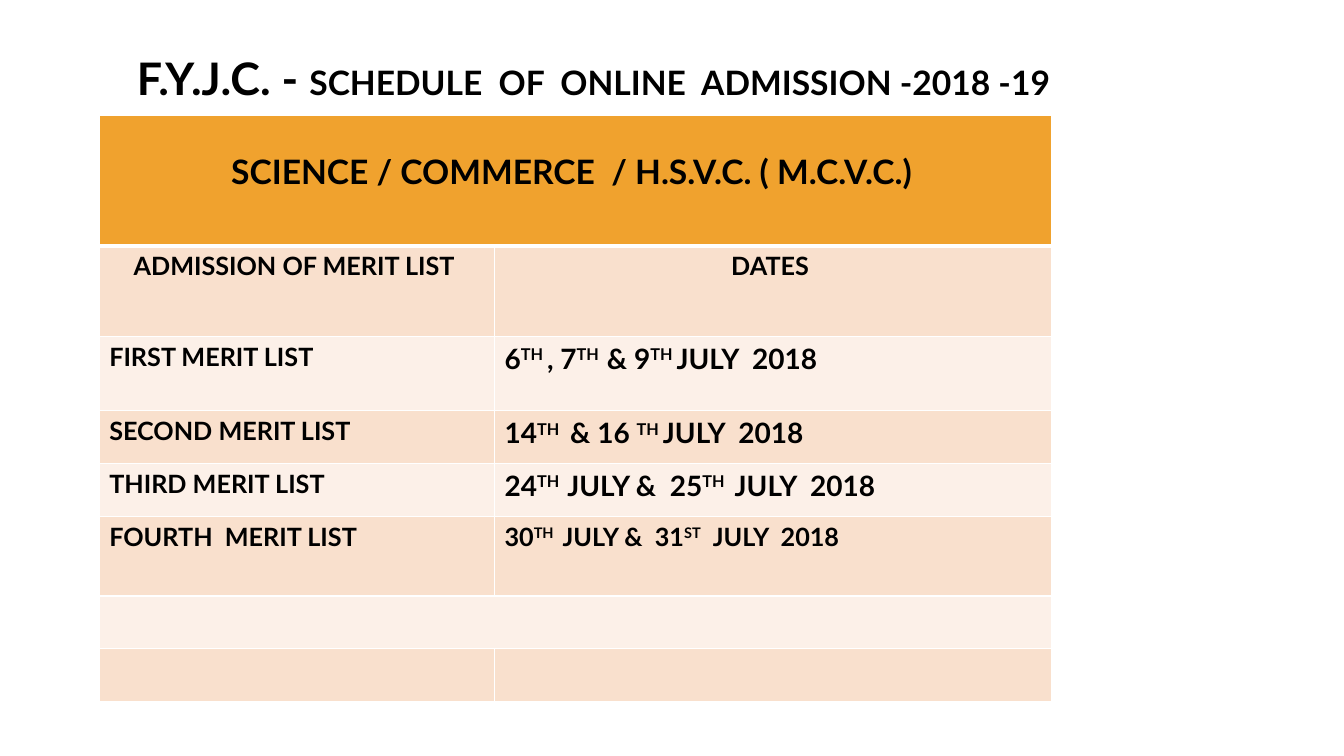
from lxml import etree
from pptx import Presentation
from pptx import util as u
from pptx.dml.color import RGBColor
from pptx.enum import text
from pptx.oxml import ns

FONT = "Lato"
BLACK, WHITE = "000000", "FFFFFF"
ORANGE, PEACH, CREAM = "F0A22E", "F9E0CD", "FCF0E8"
COLUMN_WIDTHS = [9.96, 14.05]
ROW_HEIGHTS = [3.28, 2.28, 1.87, 1.33, 1.33, 2.01, 1.33, 1.33]
STREAMS = "SCIENCE / COMMERCE  / H.S.V.C. ( M.C.V.C.) "
HEADINGS = ["ADMISSION OF MERIT LIST ", "DATES "]
MERIT_LISTS = [
    ("FIRST MERIT LIST", "6^TH ^, 7^TH  ^& 9^TH ^JULY  2018", 20),
    ("SECOND MERIT LIST", "14^TH ^ & 16 ^TH ^JULY  2018", 20),
    ("THIRD MERIT LIST", "24^TH  ^JULY &  25^TH ^ JULY  2018", 20),
    ("FOURTH  MERIT LIST", "30^TH ^ JULY &  31^ST  ^ JULY  2018", 18),
]


def color(value):
    return RGBColor.from_string(value)


def write(para, words, size=18, align=text.PP_ALIGN.LEFT, fill=BLACK):
    para.alignment = align
    for index, part in enumerate(words.split("^")):
        span = para.add_run()
        span.text = part
        span.font.name = FONT
        span.font.size = u.Pt(size)
        span.font.bold = True
        span.font.color.rgb = color(fill)
        if index % 2:
            span._r.get_or_add_rPr().set("baseline", "30000")


def paint_cell(cell, fill, top=1, bottom=1):
    cell.fill.solid()
    cell.fill.fore_color.rgb = color(fill)
    properties = cell._tc.get_or_add_tcPr()
    borders = [("lnL", 1), ("lnR", 1), ("lnT", top), ("lnB", bottom)]
    for position, (side, width) in enumerate(borders):
        line = etree.Element(ns.qn(f"a:{side}"), w=str(u.Pt(width)))
        solid = etree.SubElement(line, ns.qn("a:solidFill"))
        etree.SubElement(solid, ns.qn("a:srgbClr"), val=WHITE)
        properties.insert(position, line)


def add_title(page, left, top, width, height):
    box = page.shapes.title
    box.left, box.top, box.width, box.height = map(u.Cm, (left, top, width, height))
    frame = box.text_frame
    frame.word_wrap = True
    frame.auto_size = text.MSO_AUTO_SIZE.NONE
    frame.vertical_anchor = text.MSO_ANCHOR.TOP
    frame.margin_left = u.Cm(2.46)
    para = frame.paragraphs[0]
    write(para, "F.Y.J.C. - ", size=32)
    write(para, "SCHEDULE  OF  ONLINE  ADMISSION -2018 -19", size=24)


def add_schedule(page, left, top):
    table = page.shapes.add_table(
        len(ROW_HEIGHTS), len(COLUMN_WIDTHS), u.Cm(left), u.Cm(top),
        u.Cm(sum(COLUMN_WIDTHS)), u.Cm(sum(ROW_HEIGHTS))).table
    for column, width in zip(table.columns, COLUMN_WIDTHS):
        column.width = u.Cm(width)
    for index, (row, height) in enumerate(zip(table.rows, ROW_HEIGHTS)):
        row.height = u.Cm(height)
        fill = ORANGE if index == 0 else PEACH if index % 2 else CREAM
        for cell in row.cells:
            paint_cell(cell, fill, top=3 if index == 1 else 1,
                       bottom=3 if index == 0 else 1)
    for index in (0, 6):
        table.cell(index, 0).merge(table.cell(index, 1))

    banner = table.cell(0, 0)
    banner.margin_top = u.Cm(0.89)
    write(banner.text_frame.paragraphs[0], STREAMS, size=24,
          align=text.PP_ALIGN.CENTER)
    for index, heading in enumerate(HEADINGS):
        write(table.cell(1, index).text_frame.paragraphs[0], heading,
              align=text.PP_ALIGN.CENTER)
    for index, (name, dates, size) in enumerate(MERIT_LISTS, start=2):
        write(table.cell(index, 0).text_frame.paragraphs[0], name)
        write(table.cell(index, 1).text_frame.paragraphs[0], dates, size=size)


def main():
    deck = Presentation()
    deck.slide_width, deck.slide_height = u.Cm(33.87), u.Cm(19.05)
    page = deck.slides.add_slide(deck.slide_layouts[5])
    add_title(page, 0.99, 1.14, 29.82, 7.09)
    add_schedule(page, 2.5, 2.92)
    deck.save("out.pptx")


if __name__ == "__main__":
    main()
